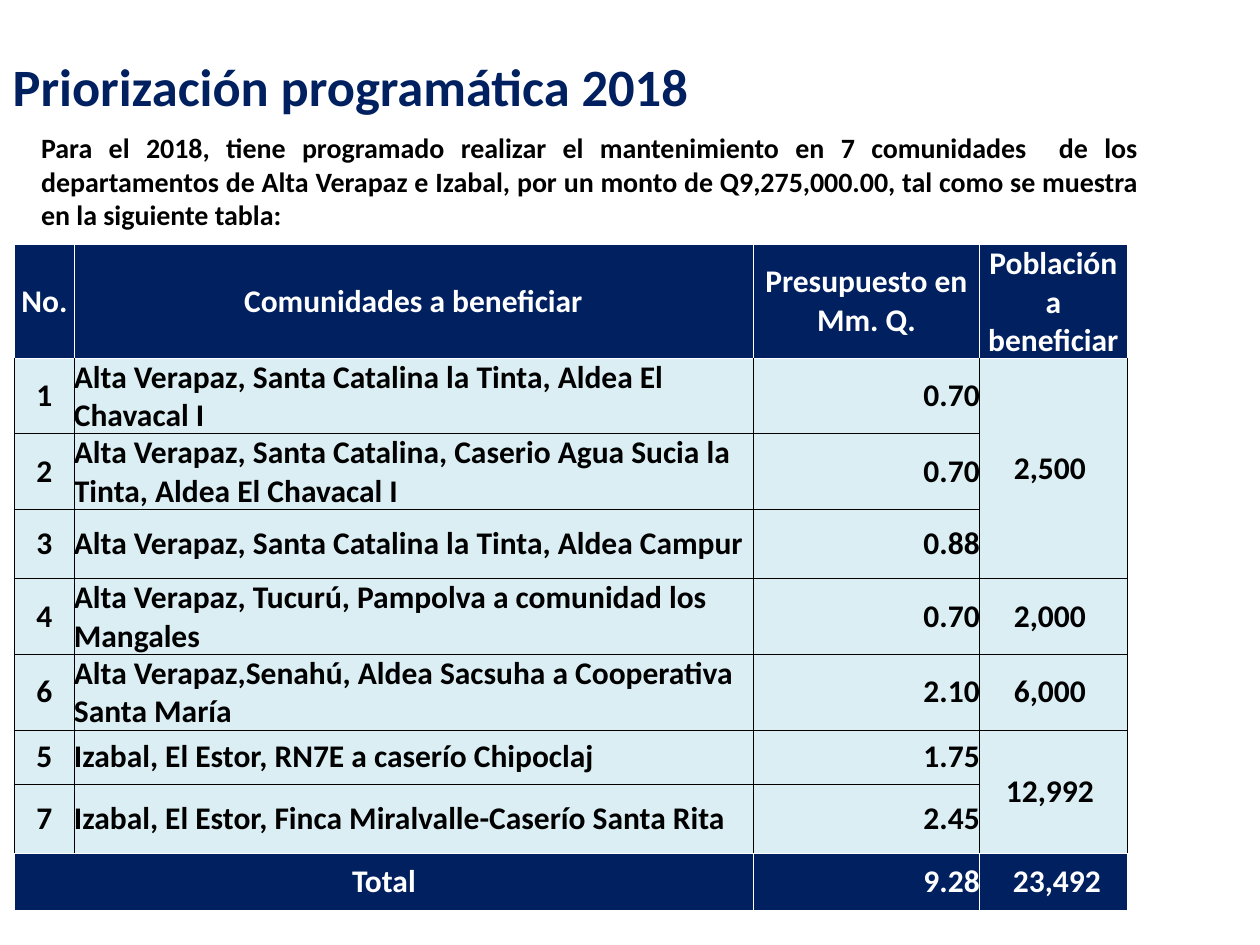
from lxml import etree
from pptx import Presentation
from pptx.dml.color import RGBColor
from pptx.enum import text
from pptx.oxml.ns import qn
from pptx.util import Cm, Pt

NAVY = RGBColor(0x00, 0x20, 0x60)
PALE_BLUE = RGBColor(0xDB, 0xEE, 0xF3)
WHITE = RGBColor(0xFF, 0xFF, 0xFF)
BLACK = RGBColor(0x00, 0x00, 0x00)

LEFT, CENTER, RIGHT, JUSTIFY = (
    text.PP_ALIGN.LEFT, text.PP_ALIGN.CENTER, text.PP_ALIGN.RIGHT, text.PP_ALIGN.JUSTIFY)

HEADER = ("No.", "Comunidades a beneficiar", "Presupuesto en Mm. Q.", "Población a beneficiar")
COMMUNITIES = [
    ("1", "Alta Verapaz, Santa Catalina la Tinta, Aldea El Chavacal I", "0.70", "2,500"),
    ("2", "Alta Verapaz, Santa Catalina, Caserio Agua Sucia la Tinta, Aldea El Chavacal I",
     "0.70", ""),
    ("3", "Alta Verapaz, Santa Catalina la Tinta, Aldea Campur", "0.88", ""),
    ("4", "Alta Verapaz, Tucurú, Pampolva a comunidad los Mangales", "0.70", "2,000"),
    ("6", "Alta Verapaz,Senahú, Aldea Sacsuha a Cooperativa Santa María", "2.10", "6,000"),
    ("5", "Izabal, El Estor, RN7E a caserío Chipoclaj", "1.75", "12,992"),
    ("7", "Izabal, El Estor, Finca Miralvalle-Caserío Santa Rita", "2.45", ""),
]
TOTAL = ("Total", "", "9.28", "23,492")
MERGES = [((1, 3), (3, 3)), ((6, 3), (7, 3)), ((8, 0), (8, 1))]
COLUMN_WIDTHS = (1.19, 13.69, 4.57, 2.97)
ROW_HEIGHTS = (1.42, 1.4, 1.42, 1.4, 1.4, 1.42, 1.09, 1.4, 1.14)
BODY_ALIGNMENTS = (CENTER, LEFT, RIGHT, CENTER)
FIGURE_INSET = Cm(0.14)


class SlideBuilder:
    font_name = "Calibri"

    def __init__(self, slide):
        self.slide = slide

    def set_text(self, frame, words, size, color, alignment):
        para = frame.paragraphs[0]
        para.text = words
        para.alignment = alignment
        font = para.font
        font.name, font.size, font.bold = self.font_name, Pt(size), True
        font.color.rgb = color

    def title(self, words, left, top, width, height):
        box = self.slide.shapes.title
        box.left, box.top, box.width, box.height = map(Cm, (left, top, width, height))
        box.text_frame.vertical_anchor = text.MSO_ANCHOR.MIDDLE
        self.set_text(box.text_frame, words, 30, NAVY, LEFT)

    def text_box(self, words, left, top, width, height):
        box = self.slide.shapes.add_textbox(*map(Cm, (left, top, width, height)))
        box.text_frame.word_wrap = True
        self.set_text(box.text_frame, words, 16, BLACK, JUSTIFY)

    def border(self, cell, side, color):
        properties = cell._tc.get_or_add_tcPr()
        line = etree.SubElement(properties, qn(f"a:ln{side}"), w=str(Pt(0.5)))
        fill = etree.SubElement(line, qn("a:solidFill"))
        etree.SubElement(fill, qn("a:srgbClr"), val=str(color))

    def table(self, rows, left, top):
        size = Cm(sum(COLUMN_WIDTHS)), Cm(sum(ROW_HEIGHTS))
        table = self.slide.shapes.add_table(
            len(rows), len(COLUMN_WIDTHS), Cm(left), Cm(top), *size).table
        table.horz_banding = False
        for column, width in zip(table.columns, COLUMN_WIDTHS):
            column.width = Cm(width)
        for row, height in zip(table.rows, ROW_HEIGHTS):
            row.height = Cm(height)
        for first, last in MERGES:
            table.cell(*first).merge(table.cell(*last))
        for r, values in enumerate(rows):
            for c, words in enumerate(values):
                self.table_cell(table.cell(r, c), words, r, c, len(rows) - 1)

    def table_cell(self, cell, words, row, column, total_row):
        dark = row in (0, total_row)
        bottom_row = row + (cell.span_height if cell.is_merge_origin else 1) - 1
        side_color = WHITE if dark else BLACK
        self.border(cell, "L", side_color)
        self.border(cell, "R", side_color)
        self.border(cell, "T", WHITE if dark or row == 1 else BLACK)
        self.border(cell, "B", WHITE if dark or bottom_row == total_row - 1 else BLACK)
        cell.fill.solid()
        cell.fill.fore_color.rgb = NAVY if dark else PALE_BLUE
        cell.vertical_anchor = text.MSO_ANCHOR.MIDDLE
        cell.margin_left = cell.margin_right = cell.margin_top = cell.margin_bottom = 0
        if column == 3 and row == total_row:
            cell.margin_left = FIGURE_INSET
        elif column == 3 and row > 0:
            cell.margin_right = FIGURE_INSET
        if cell.is_spanned:
            return
        centered = row == 0 or cell.span_width > 1
        alignment = CENTER if centered else BODY_ALIGNMENTS[column]
        self.set_text(cell.text_frame, words, 18, WHITE if dark else BLACK, alignment)


def main():
    deck = Presentation()
    deck.slide_width, deck.slide_height = Cm(25.4), Cm(19.05)
    page = SlideBuilder(deck.slides.add_slide(deck.slide_layouts[5]))
    page.title("Priorización programática 2018", 0, 0.41, 16.08, 2.64)
    page.text_box(
        "Para el 2018, tiene programado realizar el mantenimiento en 7 comunidades  de los "
        "departamentos de Alta Verapaz e Izabal, por un monto de Q9,275,000.00, tal como se "
        "muestra en la siguiente tabla:", 0.58, 2.51, 22.63, 2.31)
    page.table([HEADER, *COMMUNITIES, TOTAL], 0.3, 4.93)
    deck.save("out.pptx")


if __name__ == "__main__":
    main()
